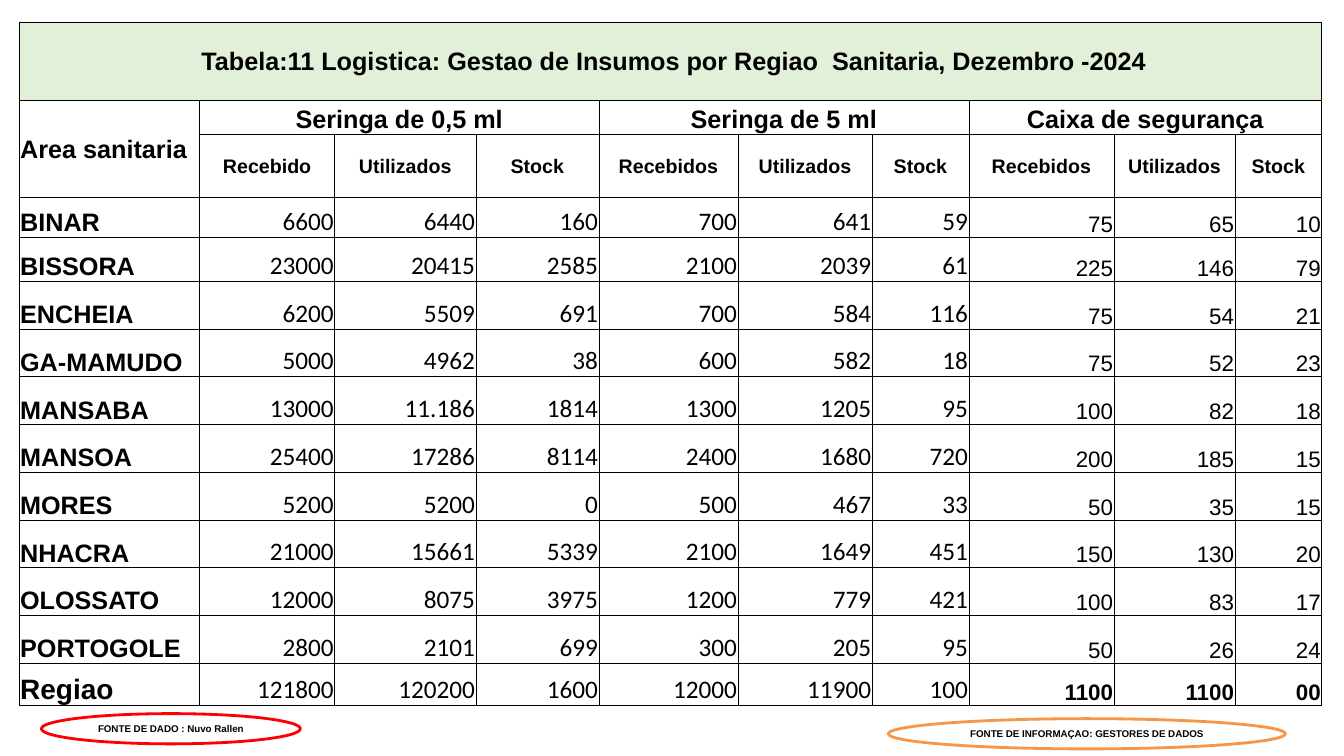
import pptx
import pptx.dml.color
import pptx.enum.shapes
import pptx.enum.text
import pptx.oxml
import pptx.oxml.ns
import pptx.util

Inches = pptx.util.Inches
Pt = pptx.util.Pt
ALIGN = pptx.enum.text.PP_ALIGN
ANCHOR = pptx.enum.text.MSO_ANCHOR

TITLE = " Tabela:11 Logistica: Gestao de Insumos por Regiao  Sanitaria, Dezembro -2024"
SUPPLIES = ["Seringa de 0,5 ml", "Seringa de 5 ml", "Caixa de segurança"]
MEASURES = ["Recebido", "Utilizados", "Stock"] + ["Recebidos", "Utilizados", "Stock"] * 2
AREAS = [
    ("BINAR", "6600 6440 160 700 641 59 75 65 10"),
    ("BISSORA", "23000 20415 2585 2100 2039 61 225 146 79"),
    ("ENCHEIA", "6200 5509 691 700 584 116 75 54 21"),
    ("GA-MAMUDO", "5000 4962 38 600 582 18 75 52 23"),
    ("MANSABA", "13000 11.186 1814 1300 1205 95 100 82 18"),
    ("MANSOA", "25400 17286 8114 2400 1680 720 200 185 15"),
    ("MORES", "5200 5200 0 500 467 33 50 35 15"),
    ("NHACRA", "21000 15661 5339 2100 1649 451 150 130 20"),
    ("OLOSSATO", "12000 8075 3975 1200 779 421 100 83 17"),
    ("PORTOGOLE", "2800 2101 699 300 205 95 50 26 24"),
    ("Regiao", "121800 120200 1600 12000 11900 100 1100 1100 00"),
]
TABLE_HEIGHT = 6.78
COLUMN_WIDTHS = [1.79, 1.34, 1.4, 1.22, 1.38, 1.33, 0.96, 1.44, 1.2, 0.86]
TOP_ROWS, TOTAL_ROW, EQUAL_ROWS = [0.78, 0.33, 0.63, 0.39, 0.44], 0.42, 8
EQUAL_HEIGHT = (TABLE_HEIGHT - sum(TOP_ROWS) - TOTAL_ROW) / EQUAL_ROWS
ROW_HEIGHTS = TOP_ROWS + [EQUAL_HEIGHT] * EQUAL_ROWS + [TOTAL_ROW]


def color(hex_value):
    return pptx.dml.color.RGBColor.from_string(hex_value)


class SlideBuilder:
    heading_font = "Arial"
    number_font = "Calibri"
    ink = "000000"
    paper = "FFFFFF"
    banner = "E2F0D9"

    def __init__(self, slide):
        self.slide = slide

    def text(self, frame, content, size, align, font=None, bold=True):
        paragraph = frame.paragraphs[0]
        paragraph.alignment = align
        run = paragraph.add_run()
        run.text = content
        run.font.size = Pt(size)
        run.font.name = font or self.heading_font
        run.font.bold = bold
        run.font.color.rgb = color(self.ink)

    def table(self, left, top, widths, heights):
        """Add an unfilled table with a thin grid and tight cell margins."""
        frame = self.slide.shapes.add_table(
            len(heights), len(widths), Inches(left), Inches(top),
            Inches(sum(widths)), Inches(sum(heights)))
        table = frame.table
        table.first_row = table.horz_banding = False
        for column, width in zip(table.columns, widths):
            column.width = Inches(width)
        for row, height in zip(table.rows, heights):
            row.height = Inches(height)
        for cell in table.iter_cells():
            cell.margin_left = cell.margin_right = cell.margin_top = Inches(0.01)
            cell.margin_bottom = 0
            self.borders(cell)
            cell.fill.background()
        return table

    def borders(self, cell):
        properties = cell._tc.get_or_add_tcPr()
        for side in "LRTB":
            properties.append(pptx.oxml.parse_xml(
                f'<a:ln{side} {pptx.oxml.ns.nsdecls("a")} w="{Pt(0.5)}">'
                f'<a:solidFill><a:srgbClr val="{self.ink}"/></a:solidFill>'
                f'</a:ln{side}>'))

    def cell(self, cell, content, size=18, align=ALIGN.CENTER, anchor=ANCHOR.BOTTOM,
             fill=None, font=None, bold=True):
        cell.vertical_anchor = anchor
        if fill:
            cell.fill.solid()
            cell.fill.fore_color.rgb = color(fill)
        self.text(cell.text_frame, content, size, align, font, bold)

    def source_ellipse(self, left, top, width, content, line, fill=None):
        shape = self.slide.shapes.add_shape(
            pptx.enum.shapes.MSO_SHAPE.OVAL,
            Inches(left), Inches(top), Inches(width), Inches(0.3))
        shape.shadow.inherit = False
        if fill:
            shape.fill.solid()
            shape.fill.fore_color.rgb = color(fill)
        else:
            shape.fill.background()
        shape.line.color.rgb = color(line)
        shape.line.width = Pt(2)
        shape.text_frame.word_wrap = True
        shape.text_frame.vertical_anchor = ANCHOR.MIDDLE
        self.text(shape.text_frame, content, 7, ALIGN.CENTER)


def fill_headings(builder, table):
    table.cell(0, 0).merge(table.cell(0, len(COLUMN_WIDTHS) - 1))
    builder.cell(table.cell(0, 0), TITLE, anchor=ANCHOR.MIDDLE, fill=builder.banner)
    table.cell(1, 0).merge(table.cell(2, 0))
    builder.cell(table.cell(1, 0), "Area sanitaria", align=ALIGN.LEFT, anchor=ANCHOR.MIDDLE)
    for index, supply in enumerate(SUPPLIES):
        first = 1 + 3 * index
        table.cell(1, first).merge(table.cell(1, first + 2))
        builder.cell(table.cell(1, first), supply, fill=builder.paper)
    for column, measure in enumerate(MEASURES, start=1):
        builder.cell(table.cell(2, column), measure, 14,
                     anchor=ANCHOR.MIDDLE, fill=builder.paper)


def fill_areas(builder, table):
    for row, (area, values) in enumerate(AREAS, start=3):
        is_total = area == "Regiao"
        builder.cell(table.cell(row, 0), area, 20 if is_total else 18, ALIGN.LEFT,
                     fill=builder.paper if is_total else None)
        for column, value in enumerate(values.split(), start=1):
            is_box = column > 6
            builder.cell(table.cell(row, column), value, 16 if is_box else 18, ALIGN.RIGHT,
                         fill=builder.paper,
                         font=builder.heading_font if is_box else builder.number_font,
                         bold=is_box and is_total)


def main():
    presentation = pptx.Presentation()
    presentation.slide_width = Inches(13.33)
    presentation.slide_height = Inches(7.5)
    builder = SlideBuilder(presentation.slides.add_slide(presentation.slide_layouts[6]))
    table = builder.table(0.19, 0.22, COLUMN_WIDTHS, ROW_HEIGHTS)
    fill_headings(builder, table)
    fill_areas(builder, table)
    builder.source_ellipse(0.41, 7.08, 2.57, "FONTE DE DADO : Nuvo Rallen", "FF0000")
    builder.source_ellipse(8.81, 7.13, 3.94, "FONTE DE INFORMAÇAO: GESTORES DE DADOS",
                           "F79646", builder.paper)
    presentation.save("out.pptx")


if __name__ == "__main__":
    main()
